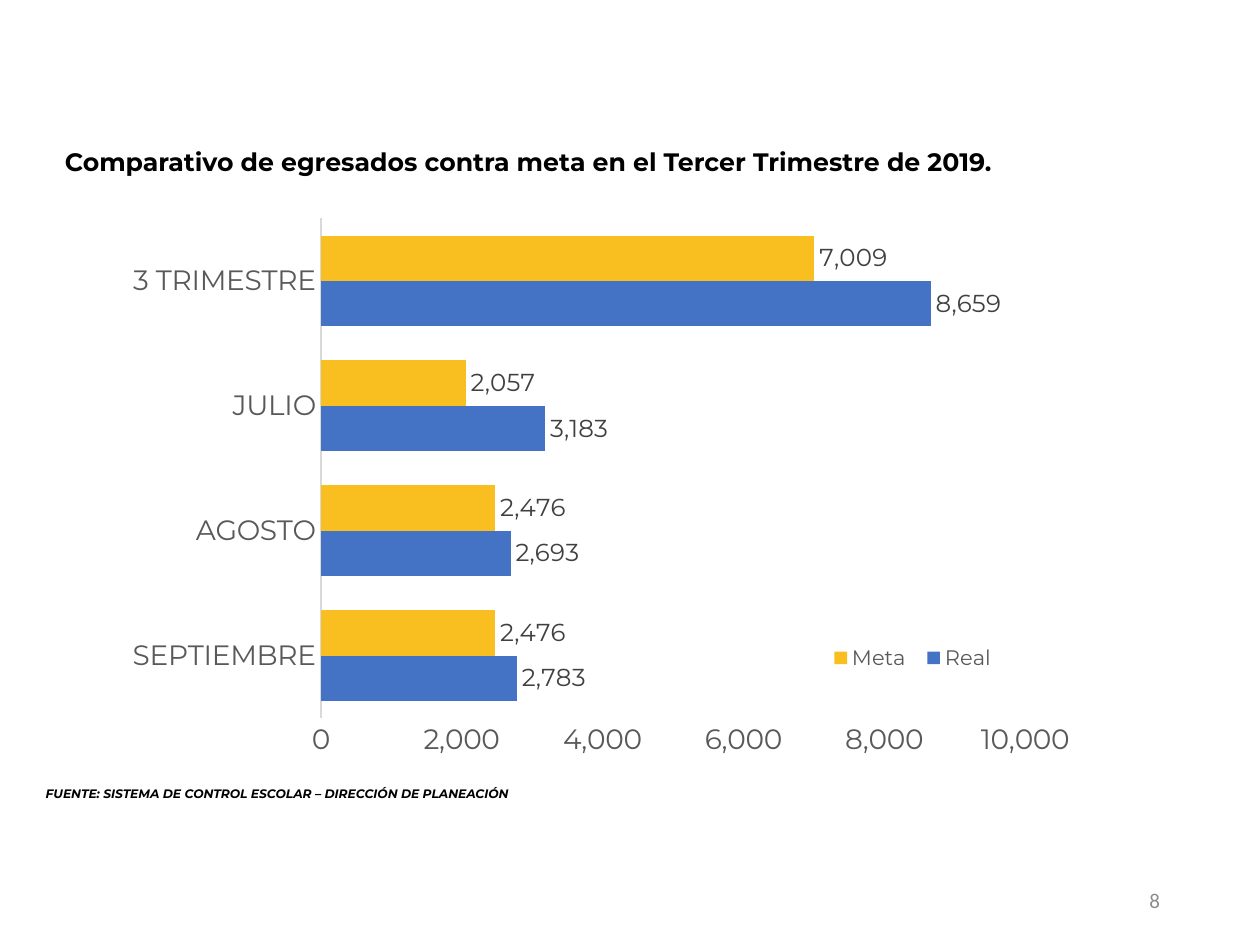
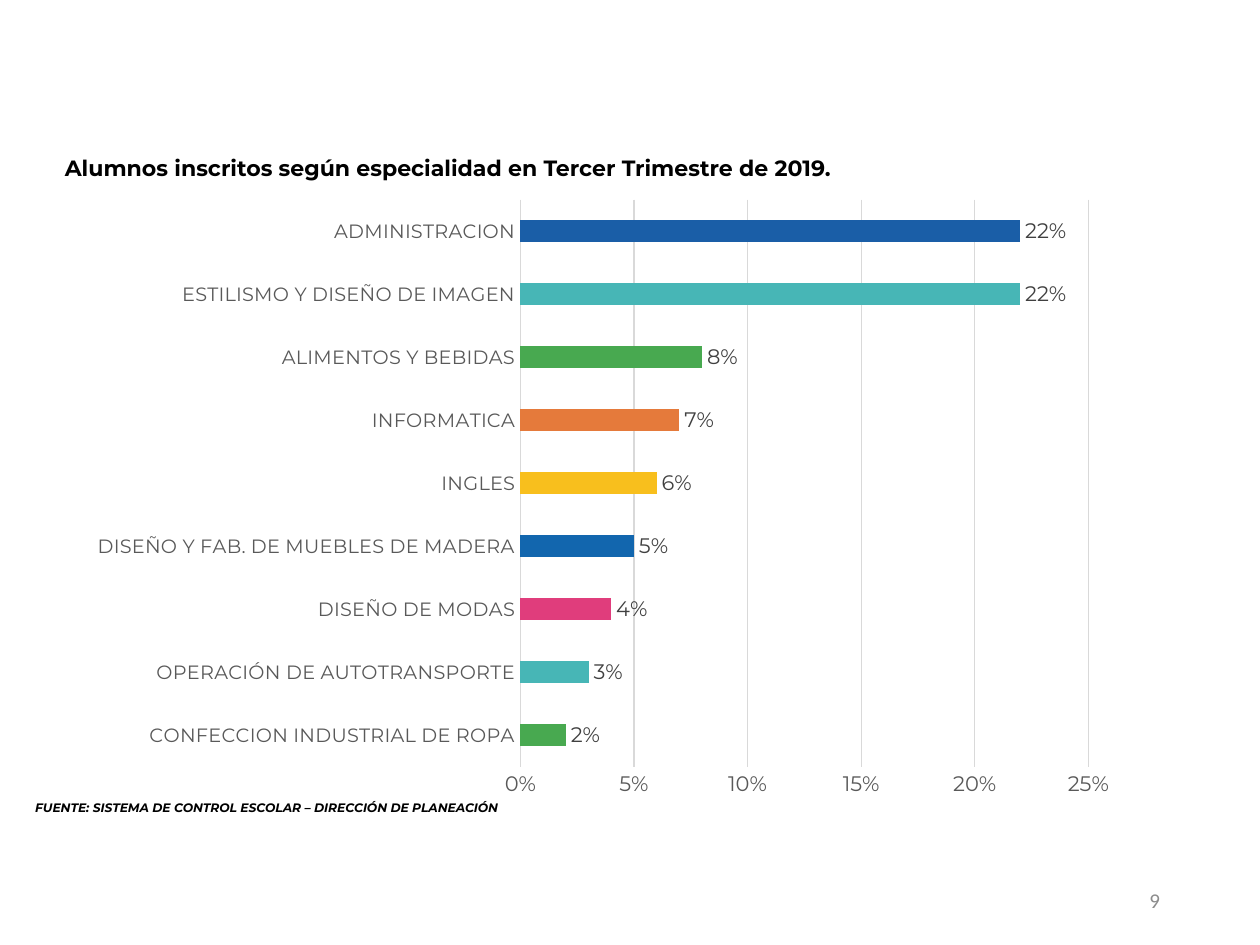
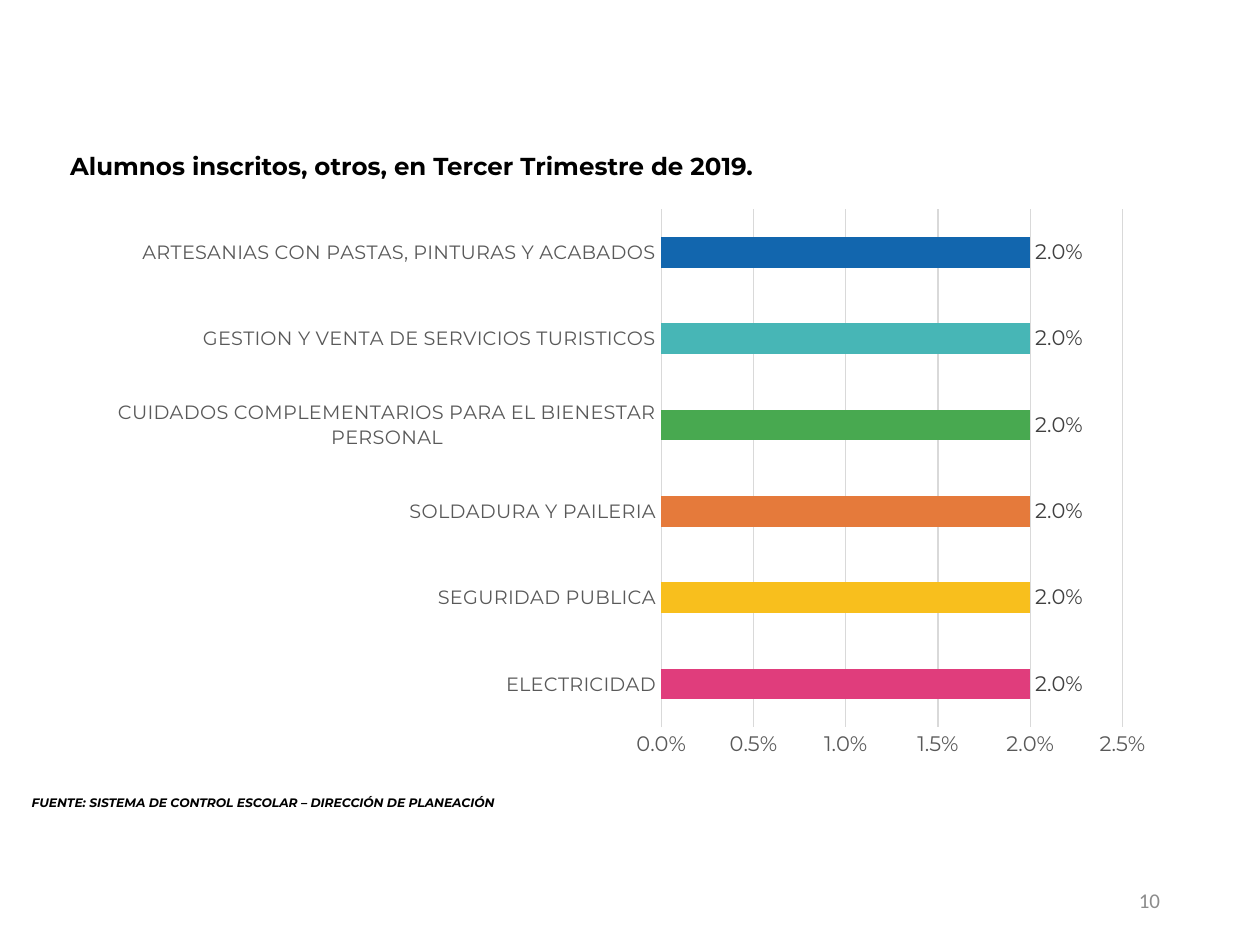
from dataclasses import dataclass
from typing import NamedTuple

from pptx import Presentation
from pptx.chart.chart import Chart
from pptx.chart.data import CategoryChartData
from pptx.dml.color import RGBColor
from pptx.enum.chart import XL_CHART_TYPE, XL_LABEL_POSITION, XL_LEGEND_POSITION, XL_TICK_MARK
from pptx.enum.text import MSO_ANCHOR, PP_ALIGN
from pptx.oxml import parse_xml
from pptx.oxml.ns import nsdecls
from pptx.slide import Slide
from pptx.util import Pt


@dataclass(frozen=True)
class Theme:
    """Colours, fonts and type sizes of the deck."""
    font: str = "Montserrat"
    plain: str = "Calibri"
    black: str = "000000"
    page: str = "8C8C8C"
    axis: str = "595959"
    label: str = "404040"
    rule: str = "D9D9D9"
    real: str = "4472C4"
    goal: str = "F9BF21"
    navy: str = "1A5EA7"
    blue: str = "1266AE"
    teal: str = "47B6B6"
    green: str = "48A950"
    orange: str = "E57A3B"
    yellow: str = "F8BF1D"
    pink: str = "E03D7C"
    note: float = 7
    base: float = 10
    small: float = 11
    body: float = 12
    mark: float = 14
    large: float = 16


THEME = Theme()
SOURCE = "FUENTE: SISTEMA DE CONTROL ESCOLAR – DIRECCIÓN DE PLANEACIÓN"


class Box(NamedTuple):
    """A frame in points, or in shares of a chart."""
    left: float
    top: float
    width: float
    height: float


class Bars(NamedTuple):
    """One series, with a colour for each bar if they differ."""
    name: str
    vals: tuple[float, ...]
    color: str = THEME.real
    tints: tuple[str, ...] = ()


@dataclass(frozen=True)
class Graph:
    """A bar chart and its format."""
    box: Box
    plot: Box
    cats: tuple[str, ...]
    bars: tuple[Bars, ...]
    form: str
    top: float
    step: float
    gap: int = 182
    cat: float = THEME.small
    val: float = THEME.body
    mark: float = THEME.body
    grid: bool = True
    key: Box | None = None


@dataclass(frozen=True)
class Page:
    """A slide with a title, a chart, a source line and a number."""
    num: int
    title: str
    size: float
    head: Box
    foot: Box
    graph: Graph


PAGES = (
    Page(
        8, "Comparativo de egresados contra meta en el Tercer Trimestre de 2019.", 14.4,
        Box(30, 78, 559, 31), Box(19, 446, 322, 16),
        Graph(
            Box(66, 118, 559, 344), Box(0.21, 0.02, 0.72, 0.83),
            ("SEPTIEMBRE", "AGOSTO", "JULIO", "3 TRIMESTRE"),
            (Bars("Real", (2783, 2693, 3183, 8659)),
             Bars("Meta", (2476, 2476, 2057, 7009), THEME.goal)),
            "#,##0", 10000, 2000, gap=75, cat=THEME.large, val=THEME.large,
            mark=THEME.mark, grid=False, key=Box(0.72, 0.72, 0.19, 0.06),
        ),
    ),
    Page(
        9, "Alumnos inscritos según especialidad en Tercer Trimestre de 2019.", 12.6,
        Box(30, 78, 490, 37), Box(13, 454, 323, 19),
        Graph(
            Box(45, 107, 601, 356), Box(0.42, 0.02, 0.54, 0.91),
            ("CONFECCION INDUSTRIAL DE ROPA", "OPERACIÓN DE AUTOTRANSPORTE",
             "DISEÑO DE MODAS", "DISEÑO Y FAB. DE MUEBLES DE MADERA", "INGLES",
             "INFORMATICA", "ALIMENTOS Y BEBIDAS", "ESTILISMO Y DISEÑO DE IMAGEN",
             "ADMINISTRACION"),
            (Bars("Series 1", (0.02, 0.03, 0.04, 0.05, 0.06, 0.07, 0.08, 0.22, 0.22),
                  tints=(THEME.green, THEME.teal, THEME.pink, THEME.blue, THEME.yellow,
                         THEME.orange, THEME.green, THEME.teal, THEME.navy)),),
            "0%", 0.25, 0.05,
        ),
    ),
    Page(
        10, "Alumnos inscritos, otros, en Tercer Trimestre de 2019.", 14,
        Box(33, 78, 428, 35), Box(11, 451, 310, 12),
        Graph(
            Box(53, 113, 613, 329), Box(0.53, 0.02, 0.43, 0.9),
            ("ELECTRICIDAD", "SEGURIDAD PUBLICA", "SOLDADURA Y PAILERIA",
             "CUIDADOS COMPLEMENTARIOS PARA EL BIENESTAR PERSONAL",
             "GESTION Y VENTA DE SERVICIOS TURISTICOS",
             "ARTESANIAS CON PASTAS, PINTURAS Y ACABADOS"),
            (Bars("Series 1", (0.02,) * 6,
                  tints=(THEME.pink, THEME.yellow, THEME.orange, THEME.green,
                         THEME.teal, THEME.blue)),),
            "0.0%", 0.025, 0.005,
        ),
    ),
)


def style(font, size: float, color: str, name: str = THEME.font,
          bold: bool = False, slant: bool = False) -> None:
    """Set the look of a font."""
    font.name, font.size = name, Pt(size)
    font.bold, font.italic = bold, slant
    font.color.rgb = RGBColor.from_string(color)


def write(slide: Slide, box: Box, text: str, *, anchor=MSO_ANCHOR.MIDDLE,
          align=PP_ALIGN.LEFT, space: float = 1.0, **look) -> None:
    """Add a text box with one styled paragraph."""
    frame = slide.shapes.add_textbox(*map(Pt, box)).text_frame
    frame.word_wrap = True
    frame.vertical_anchor = anchor
    para = frame.paragraphs[0]
    para.alignment, para.line_spacing = align, space
    run = para.add_run()
    run.text = text
    style(run.font, **look)


def place(chart: Chart, part: str, index: int, box: Box, inner: bool = False) -> None:
    """Fix a chart part in place by shares of the chart."""
    node = chart.element.xpath(f"c:chart/c:{part}")[0]
    for old in node.xpath("c:layout"):
        node.remove(old)
    target = '<c:layoutTarget val="inner"/>' if inner else ""
    modes = "".join(f'<c:{side}Mode val="edge"/>' for side in "xy")
    sizes = "".join(f'<c:{side} val="{share}"/>' for side, share in zip("xywh", box))
    node.insert(index, parse_xml(
        f'<c:layout {nsdecls("c")}><c:manualLayout>{target}{modes}{sizes}'
        "</c:manualLayout></c:layout>"))


def paint(item, color: str) -> None:
    """Fill a series or a bar."""
    item.format.fill.solid()
    item.format.fill.fore_color.rgb = RGBColor.from_string(color)


def rule(line) -> None:
    """Draw a line in the light rule colour."""
    line.color.rgb = RGBColor.from_string(THEME.rule)
    line.width = Pt(0.75)


def scale(chart: Chart, graph: Graph) -> None:
    """Format both axes."""
    cat, val = chart.category_axis, chart.value_axis
    for axis, size in ((cat, graph.cat), (val, graph.val)):
        axis.major_tick_mark = axis.minor_tick_mark = XL_TICK_MARK.NONE
        style(axis.tick_labels.font, size, THEME.axis)
    rule(cat.format.line)
    val.format.line.fill.background()
    val.minimum_scale, val.maximum_scale, val.major_unit = 0, graph.top, graph.step
    val.tick_labels.number_format = graph.form
    val.tick_labels.number_format_is_linked = False
    val.has_major_gridlines = graph.grid
    if graph.grid:
        rule(val.major_gridlines.format.line)


def draw(slide: Slide, graph: Graph) -> None:
    """Add a bar chart."""
    data = CategoryChartData(number_format=graph.form)
    data.categories = graph.cats
    for bars in graph.bars:
        data.add_series(bars.name, bars.vals)
    chart = slide.shapes.add_chart(
        XL_CHART_TYPE.BAR_CLUSTERED, *map(Pt, graph.box), data).chart
    chart.has_title = False
    style(chart.font, THEME.base, THEME.black, THEME.plain)
    scale(chart, graph)
    plot = chart.plots[0]
    plot.gap_width, plot.vary_by_categories = graph.gap, False
    for series, bars in zip(plot.series, graph.bars):
        paint(series, bars.color)
        for i, tint in enumerate(bars.tints):
            paint(series.points[i], tint)
        labels = series.data_labels
        labels.show_value = True
        labels.position = XL_LABEL_POSITION.OUTSIDE_END
        labels.number_format, labels.number_format_is_linked = graph.form, False
        style(labels.font, graph.mark, THEME.label)
    place(chart, "plotArea", 0, graph.plot, inner=True)
    chart.has_legend = graph.key is not None
    if graph.key:
        chart.legend.position = XL_LEGEND_POSITION.BOTTOM
        chart.legend.include_in_layout = False
        style(chart.legend.font, THEME.body, THEME.axis)
        place(chart, "legend", 1, graph.key)


def build(slide: Slide, page: Page) -> None:
    """Fill one slide."""
    write(slide, page.foot, SOURCE, anchor=MSO_ANCHOR.TOP,
          size=THEME.note, color=THEME.black, bold=True, slant=True)
    write(slide, Box(508, 500, 162, 29), str(page.num), align=PP_ALIGN.RIGHT,
          size=THEME.body, color=THEME.page, name=THEME.plain)
    write(slide, page.head, page.title, space=0.9,
          size=page.size, color=THEME.black, bold=True)
    draw(slide, page.graph)


def main() -> None:
    """Build and save the deck."""
    deck = Presentation()
    deck.slide_width, deck.slide_height = Pt(720), Pt(540)
    for page in PAGES:
        build(deck.slides.add_slide(deck.slide_layouts[6]), page)
    deck.save("out.pptx")


if __name__ == "__main__":
    main()
